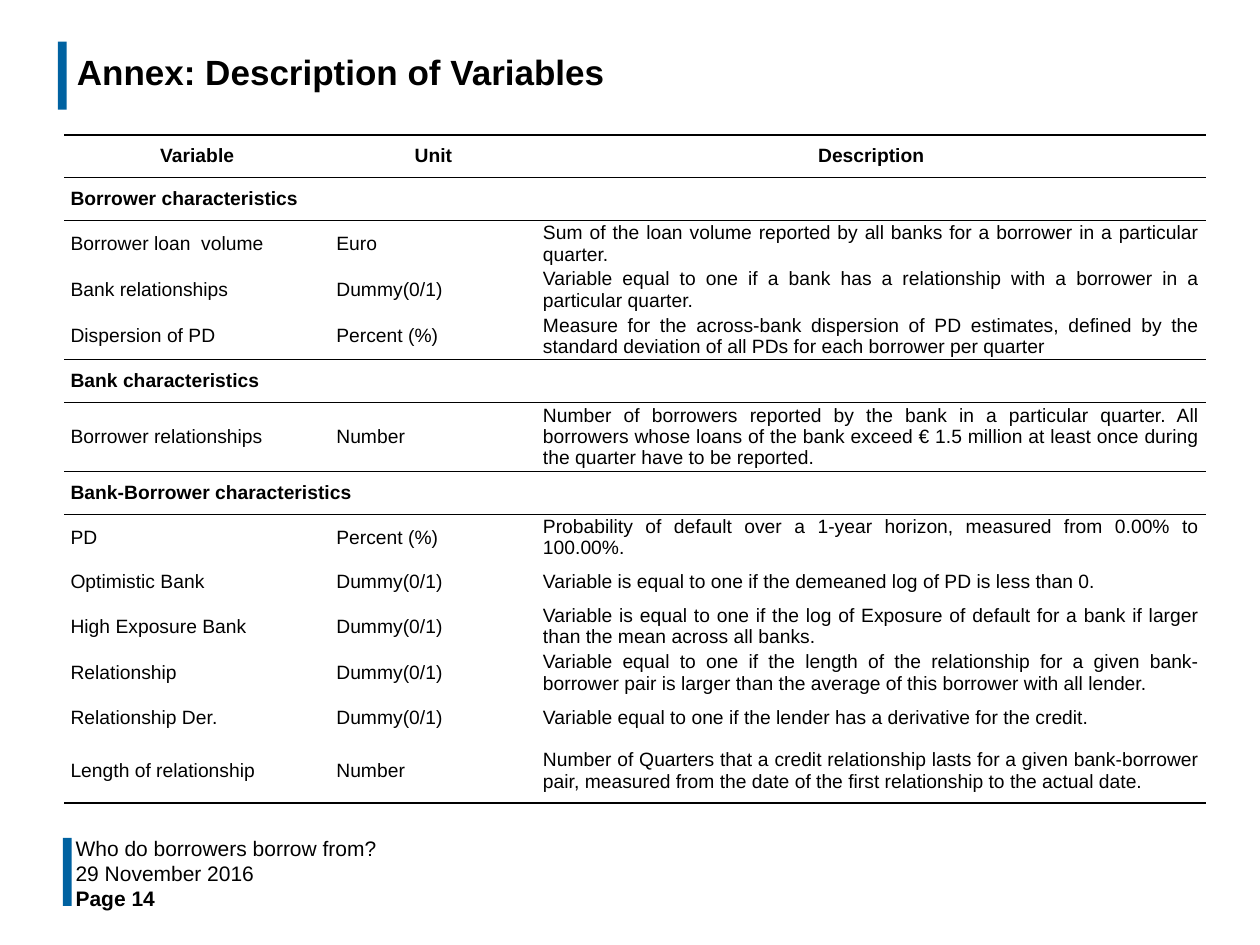
from dataclasses import dataclass

from lxml import etree
from pptx import Presentation
from pptx.dml.color import RGBColor
from pptx.enum.shapes import MSO_SHAPE
from pptx.enum.text import MSO_ANCHOR, PP_ALIGN
from pptx.oxml.ns import qn
from pptx.util import Inches, Pt

RECTANGLE = MSO_SHAPE.RECTANGLE
MIDDLE = MSO_ANCHOR.MIDDLE
LEFT, CENTER, JUSTIFY = PP_ALIGN.LEFT, PP_ALIGN.CENTER, PP_ALIGN.JUSTIFY
TITLE_ONLY_LAYOUT = 5
PLAIN_TABLE_STYLE = "{2D5ABB26-0587-4C30-8999-92F81FD0307C}"


@dataclass(frozen=True)
class Theme:
    font: str = "Arial"
    text: str = "000000"
    accent: str = "0062A1"
    title_size: int = 20
    footer_size: int = 12
    table_size: int = 11
    thin_rule: float = 0.75
    thick_rule: float = 1.5


THEME = Theme()

HEADINGS = ("Variable", "Unit", "Description")
SECTIONS = [
    ("Borrower characteristics", [
        ("Borrower loan  volume", "Euro",
         "Sum of the loan volume reported by all banks for a borrower in a particular quarter.", 0.36),
        ("Bank relationships", "Dummy(0/1)",
         "Variable equal to one if a bank has a relationship with a borrower in a particular quarter.", 0.36),
        ("Dispersion of PD", "Percent (%)",
         "Measure for the across-bank dispersion of PD estimates, defined by the standard deviation "
         "of all PDs for each borrower per quarter", 0.36),
    ]),
    ("Bank characteristics", [
        ("Borrower relationships", "Number",
         "Number of borrowers reported by the bank in a particular quarter. All borrowers whose loans "
         "of the bank exceed € 1.5 million at least once during the quarter have to be reported.", 0.53),
    ]),
    ("Bank-Borrower characteristics", [
        ("PD", "Percent (%)",
         "Probability of default over a 1-year horizon, measured from 0.00% to 100.00%.", 0.36),
        ("Optimistic Bank", "Dummy(0/1)",
         "Variable is equal to one if the demeaned log of PD is less than 0.", 0.34),
        ("High Exposure Bank", "Dummy(0/1)",
         "Variable is equal to one if the log of Exposure of default for a bank if larger than "
         "the mean across all banks.", 0.36),
        ("Relationship", "Dummy(0/1)",
         "Variable equal to one if the length of the relationship for a given bank-borrower pair "
         "is larger than the average of this borrower with all lender.", 0.36),
        ("Relationship Der.", "Dummy(0/1)",
         "Variable equal to one if the lender has a derivative for the credit.", 0.34),
        ("Length of relationship", "Number",
         "Number of Quarters that a credit relationship lasts for a given bank-borrower pair, "
         "measured from the date of the first relationship to the actual date.", 0.51),
    ]),
]
COLUMN_WIDTHS = (2.11, 1.64, 5.31)
HEADING_HEIGHT = 0.34
FOOTER_LINES = [
    ("Who do borrowers borrow from?", 6.64, 8.88, False),
    ("29 November 2016", 6.84, 2.31, False),
    ("Page 14", 7.04, 2.31, True),
]


def style_paragraph(paragraph, size, bold=False, alignment=LEFT):
    paragraph.alignment = alignment
    font = paragraph.font
    font.name = THEME.font
    font.size = Pt(size)
    font.bold = bold
    font.color.rgb = RGBColor.from_string(THEME.text)


def set_margins(target, horizontal, vertical):
    target.margin_left = target.margin_right = Inches(horizontal)
    target.margin_top = target.margin_bottom = Inches(vertical)


def add_accent_bar(slide, left, top):
    bar = slide.shapes.add_shape(
        RECTANGLE, Inches(left), Inches(top), Inches(0.07), Inches(0.54))
    bar.shadow.inherit = False
    bar.fill.solid()
    bar.fill.fore_color.rgb = RGBColor.from_string(THEME.accent)
    bar.line.fill.background()


def set_title(slide, text):
    title = slide.shapes.title
    title.left, title.top = Inches(0.51), Inches(0.28)
    title.width, title.height = Inches(9.29), Inches(0.63)
    frame = title.text_frame
    frame.text = text
    frame.vertical_anchor = MIDDLE
    set_margins(frame, 0.1, 0.05)
    paragraph = frame.paragraphs[0]
    style_paragraph(paragraph, THEME.title_size, bold=True)
    paragraph.line_spacing = Pt(20.4)


def add_footer_line(slide, text, top, width, bold):
    box = slide.shapes.add_textbox(
        Inches(0.51), Inches(top), Inches(width), Inches(0.18))
    frame = box.text_frame
    frame.word_wrap = True
    frame.vertical_anchor = MIDDLE
    set_margins(frame, 0.09, 0.04)
    frame.text = text
    style_paragraph(frame.paragraphs[0], THEME.footer_size, bold)


def add_border(cell, tag, width):
    properties = cell._tc.get_or_add_tcPr()
    line = etree.SubElement(properties, qn(tag), w=str(Pt(width)))
    if width:
        fill = etree.SubElement(line, qn("a:solidFill"))
        etree.SubElement(fill, qn("a:srgbClr"), val=THEME.text)
    else:
        etree.SubElement(line, qn("a:noFill"))


def fill_cell(cell, text, bold, alignment):
    cell.fill.background()
    cell.vertical_anchor = MIDDLE
    set_margins(cell, 0.05, 0)
    cell.text = text
    style_paragraph(cell.text_frame.paragraphs[0], THEME.table_size, bold, alignment)


def table_rows():
    rows = [(HEADINGS, HEADING_HEIGHT, True)]
    rules = [THEME.thick_rule]
    for heading, variables in SECTIONS:
        rows.append(((heading, "", ""), HEADING_HEIGHT, True))
        rules += [THEME.thin_rule] * 2
        rows += [(variable[:3], variable[3], False) for variable in variables]
        rules += [0] * (len(variables) - 1)
    return rows, rules + [THEME.thick_rule]


def add_variable_table(slide):
    rows, rules = table_rows()
    table_height = sum(height for _, height, _ in rows)
    frame = slide.shapes.add_table(
        len(rows), len(COLUMN_WIDTHS), Inches(0.51), Inches(1.07),
        Inches(sum(COLUMN_WIDTHS)), Inches(table_height))
    table = frame.table
    table.first_row = table.horz_banding = False
    table._tbl.tblPr.find(qn("a:tableStyleId")).text = PLAIN_TABLE_STYLE
    for column, width in zip(table.columns, COLUMN_WIDTHS):
        column.width = Inches(width)
    for row_index, (texts, height, is_heading) in enumerate(rows):
        table.rows[row_index].height = Inches(height)
        is_section = is_heading and row_index > 0
        for column_index, text in enumerate(texts):
            cell = table.cell(row_index, column_index)
            add_border(cell, "a:lnT", rules[row_index])
            add_border(cell, "a:lnB", rules[row_index + 1])
            if row_index == 0:
                alignment = CENTER
            else:
                alignment = JUSTIFY if column_index == 2 else LEFT
            fill_cell(cell, text, is_heading, alignment)
        if is_section:
            table.cell(row_index, 0).merge(table.cell(row_index, 2))


def main():
    presentation = Presentation()
    presentation.slide_width, presentation.slide_height = Inches(10), Inches(7.5)
    slide = presentation.slides.add_slide(presentation.slide_layouts[TITLE_ONLY_LAYOUT])
    add_accent_bar(slide, 0.46, 0.33)
    add_accent_bar(slide, 0.5, 6.65)
    set_title(slide, "Annex: Description of Variables")
    for footer_line in FOOTER_LINES:
        add_footer_line(slide, *footer_line)
    add_variable_table(slide)
    presentation.save("out.pptx")


if __name__ == "__main__":
    main()
